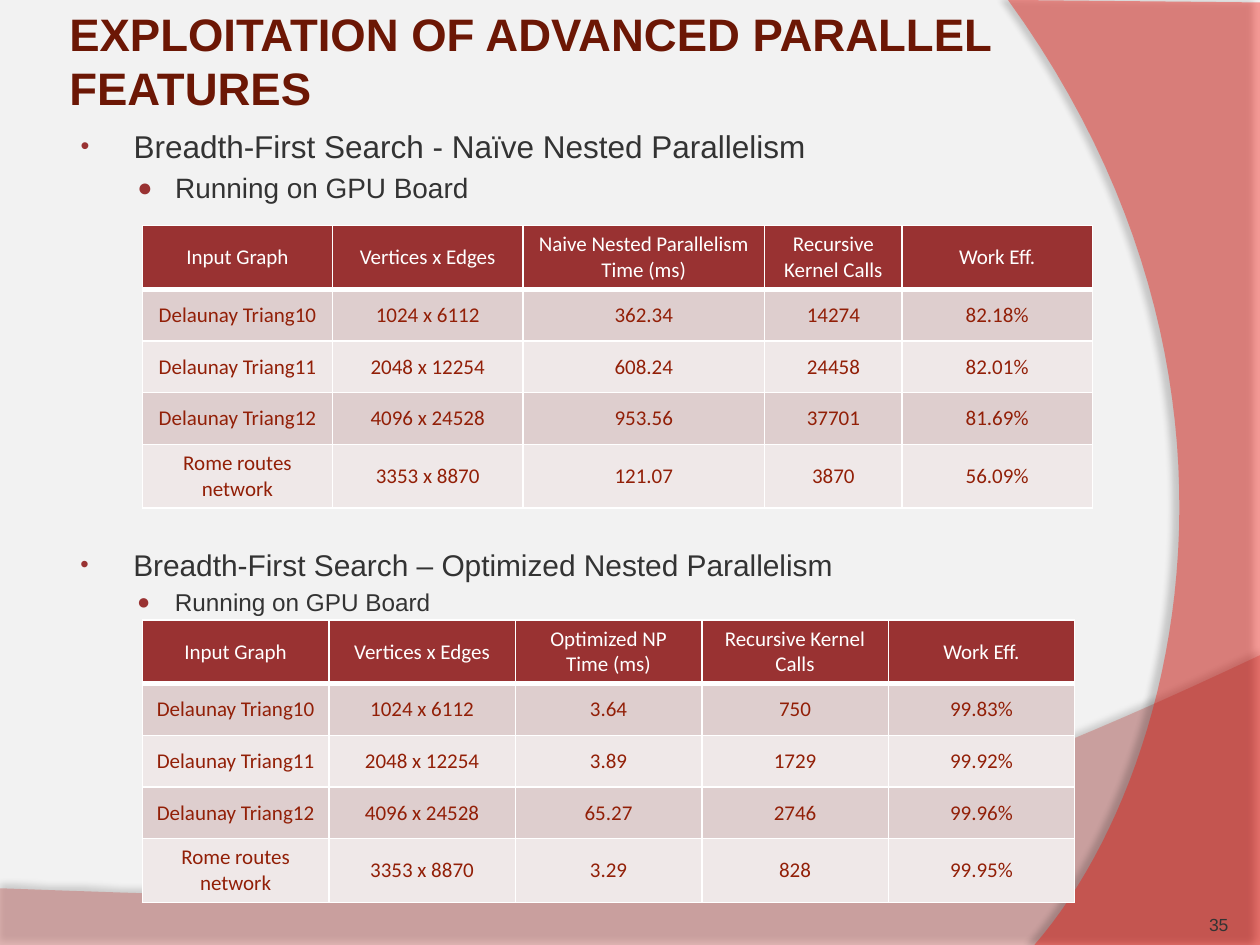
from lxml import etree
from pptx import Presentation
from pptx.dml.color import RGBColor
from pptx.enum.text import MSO_ANCHOR, MSO_AUTO_SIZE, PP_ALIGN
from pptx.oxml.ns import qn
from pptx.util import Inches, Pt

LEFT, CENTER, RIGHT = PP_ALIGN.LEFT, PP_ALIGN.CENTER, PP_ALIGN.RIGHT
TOP, MIDDLE, BOTTOM = MSO_ANCHOR.TOP, MSO_ANCHOR.MIDDLE, MSO_ANCHOR.BOTTOM
NO_AUTOFIT = MSO_AUTO_SIZE.NONE

DARK_RED, RED, CELL_RED = "6C1705", "993232", "921F07"
GREY, WHITE, BACKGROUND = "333333", "FFFFFF", "F2F2F2"
BANDS = ["DECECE", "EFE8E8"]
ROW_HEIGHT = 0.41

GRAPHS = [
    ("Delaunay Triang10", "1024 x 6112"),
    ("Delaunay Triang11", "2048 x 12254"),
    ("Delaunay Triang12", "4096 x 24528"),
    ("Rome routes network", "3353 x 8870"),
]
NAIVE_RESULTS = [
    ("362.34", "14274", "82.18%"),
    ("608.24", "24458", "82.01%"),
    ("953.56", "37701", "81.69%"),
    ("121.07", "3870", "56.09%"),
]
OPTIMIZED_RESULTS = [
    ("3.64", "750", "99.83%"),
    ("3.89", "1729", "99.92%"),
    ("65.27", "2746", "99.96%"),
    ("3.29", "828", "99.95%"),
]


def rgb(hex_color):
    return RGBColor.from_string(hex_color)


def child(parent, tag, **attributes):
    """Append a DrawingML element with the given attributes."""
    element = etree.SubElement(parent, qn(f"a:{tag}"))
    for name, value in attributes.items():
        element.set(name, str(value))
    return element


def write(paragraph, text, size, color, font="Arial", bold=False, align=LEFT):
    paragraph.alignment = align
    run = paragraph.add_run()
    run.text = text
    run.font.name = font
    run.font.size = Pt(size)
    run.font.bold = bold
    run.font.color.rgb = rgb(color)


def place(shape, left, top, width, height, anchor=TOP, inset=None):
    shape.left, shape.top = Inches(left), Inches(top)
    shape.width, shape.height = Inches(width), Inches(height)
    frame = shape.text_frame
    frame.word_wrap = True
    frame.auto_size = NO_AUTOFIT
    frame.vertical_anchor = anchor
    if inset is not None:
        frame.margin_left = frame.margin_right = Inches(inset)
        frame.margin_top = frame.margin_bottom = Inches(inset)
    return frame


def curve(start, control_1, control_2, end, steps=48):
    """Points along a cubic Bezier curve."""
    points = []
    for step in range(steps + 1):
        t = step / steps
        weights = ((1 - t) ** 3, 3 * t * (1 - t) ** 2, 3 * t * t * (1 - t), t ** 3)
        corners = (start, control_1, control_2, end)
        points.append(tuple(sum(w * corner[axis] for w, corner in zip(weights, corners))
                            for axis in (0, 1)))
    return points


def add_swoosh(slide, depth, points, color, opacity, shadow):
    """Translucent outline at the given depth; shadow is (opacity, blur, distance, angle)."""
    outline = [(Inches(x), Inches(y)) for x, y in points]
    builder = slide.shapes.build_freeform(*outline[0])
    builder.add_line_segments(outline[1:], close=True)
    swoosh = builder.convert_to_shape()
    swoosh.fill.solid()
    swoosh.fill.fore_color.rgb = rgb(color)
    swoosh.line.fill.background()
    properties = swoosh._element.spPr
    child(properties.find(f".//{qn('a:srgbClr')}"), "alpha", val=opacity * 1000)
    shadow_opacity, blur, distance, angle = shadow
    cast = child(child(properties, "effectLst"), "outerShdw", blurRad=Pt(blur),
                 dist=Pt(distance), dir=angle * 60000, algn="ctr", rotWithShape=0)
    child(child(cast, "srgbClr", val="000000"), "alpha", val=shadow_opacity * 1000)
    slide.shapes._spTree.insert(2 + depth, swoosh._element)


def add_backdrop(slide):
    slide.background.fill.solid()
    slide.background.fill.fore_color.rgb = rgb(BACKGROUND)
    bottom_wave = [(0, 7.51), (10, 7.51)]
    bottom_wave += curve((10, 5.2), (5.59, 7.29), (3.91, 7.19), (0, 7.05))
    add_swoosh(slide, 0, bottom_wave, "C76A66", 45, (35, 4, 3.5, 270))
    right_arc = [(10, 0.02), (10, 7.5)]
    right_arc += curve((8.21, 7.5), (9.35, 6.19), (10.18, 3), (8, 0))
    add_swoosh(slide, 1, right_arc, "F61309", 40, (45, 4, 4, 180))


def add_bullet(paragraph, symbol, percent, margin, indent):
    properties = paragraph._p.get_or_add_pPr()
    properties.set("marL", str(Inches(margin)))
    properties.set("indent", str(Inches(indent)))
    child(child(properties, "buClr"), "srgbClr", val=RED)
    child(properties, "buSzPct", val=percent * 1000)
    child(properties, "buFont", typeface="Arial")
    child(properties, "buChar", char=symbol)


def fill_heading(shape, left, top, heading, platform, sizes):
    frame = place(shape, left, top, 8.17, 0.59)
    first, second = frame.paragraphs[0], frame.add_paragraph()
    second.level = 1
    add_bullet(first, "•", 80, 0.46, -0.42)
    add_bullet(second, "●", 90, 0.79, -0.3)
    first.space_before = Pt(0)
    second.space_before = Pt(round(0.2 * sizes[1], 1))
    write(first, heading, sizes[0], GREY)
    write(second, platform, sizes[1], GREY)


def format_cell(cell, text, color, fill, top_line, bottom_line):
    cell.vertical_anchor = MIDDLE
    write(cell.text_frame.paragraphs[0], text, 12, color, font="Calibri", align=CENTER)
    properties = cell._tc.get_or_add_tcPr()
    widths = {"lnL": 1, "lnR": 1, "lnT": top_line, "lnB": bottom_line}
    for side, width in widths.items():
        border = child(properties, side, w=Pt(width))
        child(child(border, "solidFill"), "srgbClr", val=WHITE)
    cell.fill.solid()
    cell.fill.fore_color.rgb = rgb(fill)


def add_results(slide, left, top, column_widths, headers, results):
    rows = [headers] + [graph + result for graph, result in zip(GRAPHS, results)]
    table = slide.shapes.add_table(
        len(rows), len(headers), Inches(left), Inches(top),
        Inches(sum(column_widths)), Inches(ROW_HEIGHT * len(rows))).table
    for column, width in zip(table.columns, column_widths):
        column.width = Inches(width)
    for r, row in enumerate(rows):
        color, fill = (CELL_RED, BANDS[(r - 1) % 2]) if r else (WHITE, RED)
        for c, text in enumerate(row):
            format_cell(table.cell(r, c), text, color, fill,
                        top_line=3 if r == 1 else 1, bottom_line=1 if r else 3)


def add_page_number(slide, left, top, number):
    box = slide.shapes.add_textbox(0, 0, 0, 0)
    frame = place(box, left, top, 0.83, 0.4, anchor=BOTTOM, inset=0)
    write(frame.paragraphs[0], number, 10, GREY, align=RIGHT)


def main():
    deck = Presentation()
    deck.slide_width, deck.slide_height = Inches(10), Inches(7.5)
    slide = deck.slides.add_slide(deck.slide_layouts[1])
    add_backdrop(slide)

    title = place(slide.shapes.title, 0.5, 0.01, 8.17, 0.94, anchor=MIDDLE, inset=0.05)
    write(title.paragraphs[0], "EXPLOITATION OF ADVANCED PARALLEL FEATURES",
          26, DARK_RED, bold=True)

    platform = "Running on GPU Board"
    fill_heading(slide.placeholders[1], 0.5, 0.96,
                 "Breadth-First Search - Naïve Nested Parallelism", platform, (18, 16))
    add_page_number(slide, 8.92, 7.02, "35")
    add_results(slide, 1.13, 1.79, [1.51, 1.51, 1.92, 1.09, 1.51],
                ["Input Graph", "Vertices x Edges", "Naive Nested Parallelism Time (ms)",
                 "Recursive Kernel Calls", "Work Eff."], NAIVE_RESULTS)
    fill_heading(slide.shapes.add_textbox(0, 0, 0, 0), 0.5, 4.29,
                 "Breadth-First Search – Optimized Nested Parallelism", platform, (17.1, 13.9))
    add_results(slide, 1.13, 4.92, [1.48] * 5,
                ["Input Graph", "Vertices x Edges", "Optimized NP Time (ms)",
                 "Recursive Kernel Calls", "Work Eff."], OPTIMIZED_RESULTS)
    deck.save("out.pptx")


if __name__ == "__main__":
    main()
